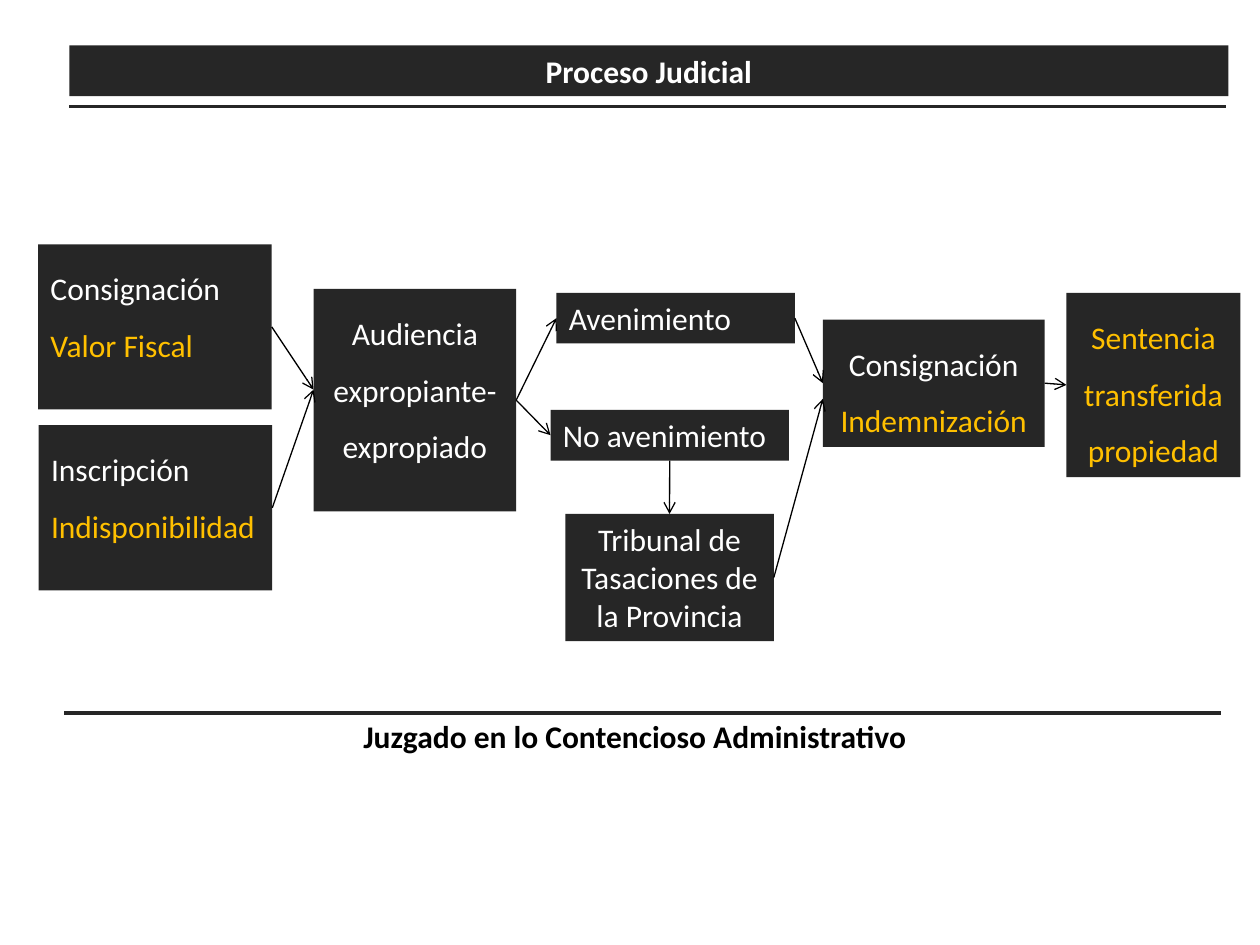
"""Build the slide that charts the stages of the judicial process."""
from dataclasses import dataclass

from lxml import etree
from pptx import Presentation
from pptx.dml.color import RGBColor
from pptx.enum import shapes, text
from pptx.oxml.ns import qn
from pptx.util import Pt


@dataclass(frozen=True)
class Theme:
    dark: str = "262626"
    light: str = "FFFFFF"
    accent: str = "FFC000"
    black: str = "000000"
    font: str = "Calibri"
    size: float = 18
    rule: float = 2
    arrow: float = 0.75


THEME = Theme()
LEFT, CENTER = text.PP_ALIGN.LEFT, text.PP_ALIGN.CENTER


@dataclass(frozen=True)
class Span:
    words: str
    color: str = THEME.light
    bold: bool = False


@dataclass(frozen=True)
class Stage:
    left: float
    top: float
    width: float
    height: float
    paras: tuple[tuple[Span, ...], ...]
    align: text.PP_ALIGN = CENTER
    spacing: float = 1

    def point(self, across: float, down: float, shift: float = 0) -> tuple[float, float]:
        return self.left + across * self.width, self.top + down * self.height + shift

    def entry(self, shift: float = 0) -> tuple[float, float]:
        return self.point(0, 0.5, shift)

    def exit(self) -> tuple[float, float]:
        return self.point(1, 0.5)


def write_text(frame, paras, *, align=LEFT, spacing=1.0) -> None:
    frame.word_wrap = True
    frame.auto_size = text.MSO_AUTO_SIZE.NONE
    frame.vertical_anchor = text.MSO_ANCHOR.TOP
    for index, spans in enumerate(paras):
        para = frame.add_paragraph() if index else frame.paragraphs[0]
        para.alignment, para.line_spacing = align, spacing
        for span in spans:
            run = para.add_run()
            run.text = span.words
            run.font.name, run.font.size = THEME.font, Pt(THEME.size)
            run.font.bold = span.bold
            run.font.color.rgb = RGBColor.from_string(span.color)


def fill_dark(box) -> None:
    box.fill.solid()
    box.fill.fore_color.rgb = RGBColor.from_string(THEME.dark)


def draw_stage(page, stage: Stage) -> None:
    box = page.shapes.add_shape(
        shapes.MSO_SHAPE.RECTANGLE,
        Pt(stage.left), Pt(stage.top), Pt(stage.width), Pt(stage.height))
    box.shadow.inherit = False
    fill_dark(box)
    box.line.fill.background()
    write_text(box.text_frame, stage.paras, align=stage.align, spacing=stage.spacing)


def draw_line(page, start: tuple[float, float], end: tuple[float, float], *,
              color: str = THEME.black, width: float = THEME.arrow,
              arrow: bool = True) -> None:
    line = page.shapes.add_connector(
        shapes.MSO_CONNECTOR.STRAIGHT, *(Pt(value) for value in (*start, *end)))
    line.line.color.rgb = RGBColor.from_string(color)
    line.line.width = Pt(width)
    if arrow:
        etree.SubElement(line.line._get_or_add_ln(), qn("a:tailEnd"), type="arrow")
    etree.SubElement(line._element.spPr, qn("a:effectLst"))


def draw_rule(page, left: float, top: float, width: float = 661) -> None:
    draw_line(page, (left, top), (left + width, top),
              color=THEME.dark, width=THEME.rule, arrow=False)


def place(box, left: float, top: float, width: float, height: float) -> None:
    box.left, box.top, box.width, box.height = map(Pt, (left, top, width, height))


def pair(first: str, second: str) -> tuple[tuple[Span, ...], ...]:
    return (Span(first),), (Span(second, THEME.accent),)


def main() -> None:
    deck = Presentation()
    deck.slide_width, deck.slide_height = Pt(720), Pt(540)
    page = deck.slides.add_slide(deck.slide_layouts[5])

    title = page.shapes.title
    place(title, 39.6, 26, 662.4, 29)
    fill_dark(title)
    write_text(title.text_frame, ((Span("Proceso Judicial", bold=True),),), align=CENTER)
    draw_rule(page, 39.6, 61)

    deposit = Stage(21.8, 139.6, 133.5, 94.4,
                    pair("Consignación", "Valor Fiscal"), LEFT, 1.5)
    registration = Stage(22.1, 243, 133.5, 94.4,
                         pair("Inscripción", "Indisponibilidad"), LEFT, 1.5)
    hearing = Stage(179.2, 165, 115.8, 127.3,
                    ((Span("Audiencia expropiante- expropiado"),),), spacing=1.5)
    agreement = Stage(318, 167.3, 136.2, 29, ((Span("Avenimiento"),),), LEFT)
    no_agreement = Stage(314.6, 234.2, 136.2, 29, ((Span("No avenimiento"),),), LEFT)
    court = Stage(323, 293.7, 119.2, 72.7,
                  ((Span("Tribunal de Tasaciones de la Provincia"),),))
    compensation = Stage(
        470.2, 182.6, 126.7, 72.7,
        ((Span("Consignación "), Span("Indemnización", THEME.accent)),), spacing=1.5)
    ruling = Stage(609.4, 167.3, 99.5, 105.3,
                   ((Span("Sentencia transferida propiedad", THEME.accent),),), spacing=1.5)

    for stage in (deposit, registration, hearing, agreement, no_agreement,
                  court, compensation, ruling):
        draw_stage(page, stage)

    for start, end in (
        (deposit.exit(), hearing.entry(-6)),
        (registration.exit(), hearing.entry(-6)),
        (hearing.exit(), agreement.entry()),
        (hearing.exit(), no_agreement.entry()),
        (no_agreement.point(0.5, 1), court.point(0.5, 0)),
        (agreement.exit(), compensation.entry()),
        (court.exit(), compensation.entry(9)),
        (compensation.exit(), ruling.entry()),
    ):
        draw_line(page, start, end)

    draw_rule(page, 36.7, 407.5)
    caption = page.shapes.add_textbox(Pt(130.3), Pt(406.1), Pt(465), Pt(29))
    write_text(caption.text_frame,
               ((Span("Juzgado en lo Contencioso Administrativo", THEME.black, True),),),
               align=CENTER)
    deck.save("out.pptx")


if __name__ == "__main__":
    main()
